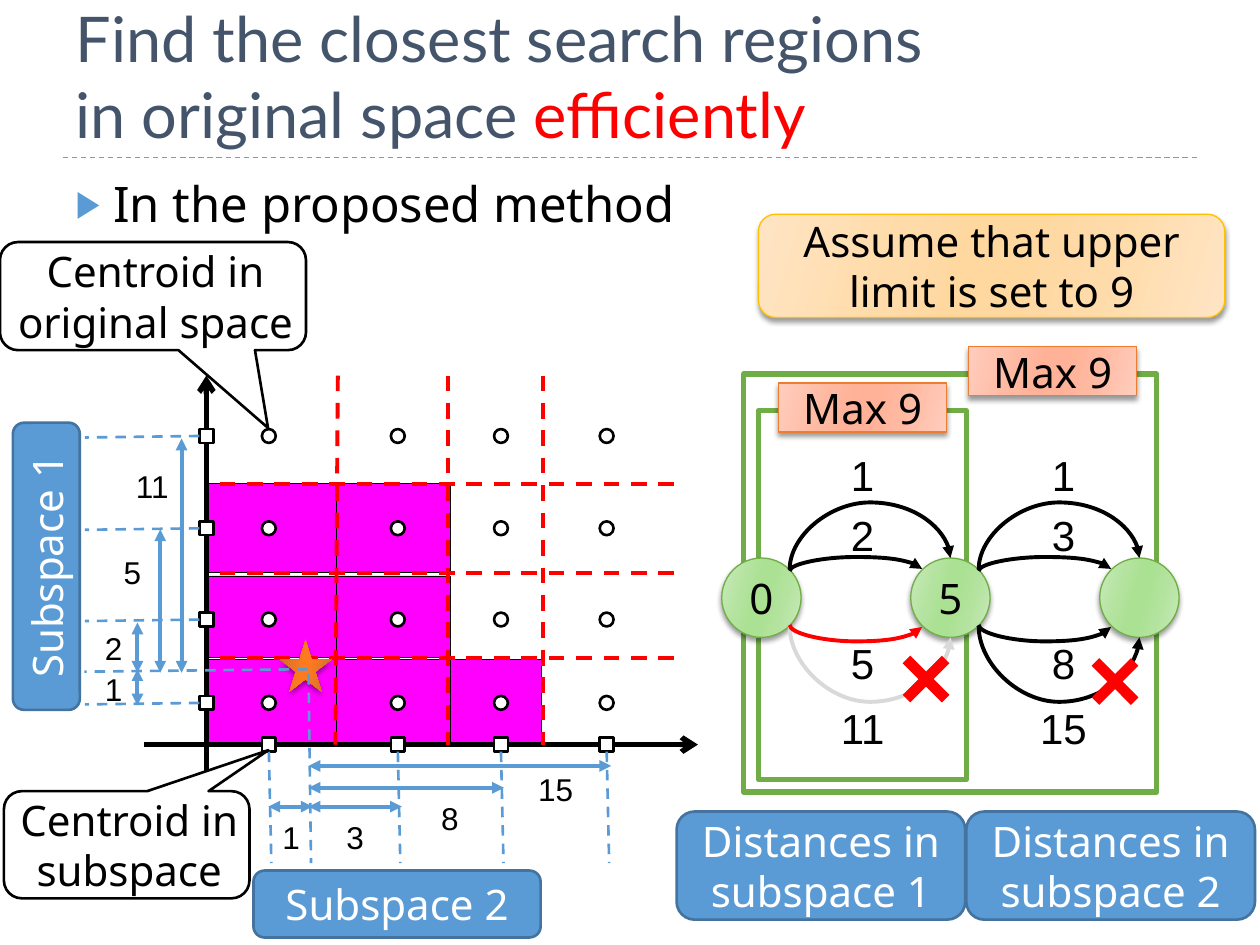
import pptx
import pptx.util
import pptx.dml.color
import pptx.enum.dml
import pptx.enum.shapes
import pptx.enum.text
import pptx.oxml.ns
from lxml import etree

Cm, Pt = pptx.util.Cm, pptx.util.Pt
RGB = pptx.dml.color.RGBColor
SHAPE = pptx.enum.shapes.MSO_SHAPE
LINK = pptx.enum.shapes.MSO_CONNECTOR
ALIGN = pptx.enum.text.PP_ALIGN
ANCHOR = pptx.enum.text.MSO_ANCHOR
qn = pptx.oxml.ns.qn

BLACK, WHITE, RED = RGB(0, 0, 0), RGB(255, 255, 255), RGB(255, 0, 0)
SLATE, GREY = RGB(0x44, 0x54, 0x6A), RGB(0xD9, 0xD9, 0xD9)
BLUE, NAVY = RGB(0x5B, 0x9B, 0xD5), RGB(0x43, 0x73, 0x9E)
ORANGE, GOLD, GREEN = RGB(0xED, 0x7D, 0x31), RGB(0xFF, 0xC0, 0), RGB(0x70, 0xAD, 0x47)
MAGENTA = RGB(255, 0, 255)
# Glossy fills: edge, shoulder and middle colours
STAR = RGB(0xC2, 0x66, 0x28), RGB(0xEB, 0x76, 0x26), RGB(0xFE, 0x7A, 0x20)
CREAM = RGB(0xFF, 0xE5, 0xC5), RGB(0xFF, 0xDB, 0xA9), RGB(0xFF, 0xD8, 0xA0)
SALMON = RGB(0xFF, 0xCD, 0xBE), RGB(0xFF, 0xB9, 0xA1), RGB(0xFF, 0xB2, 0x97)
LIME = RGB(0xCA, 0xEA, 0xBD), RGB(0xB3, 0xE3, 0x9E), RGB(0xAB, 0xE1, 0x93)


def add(parent, tag, **attrs):
    return etree.SubElement(parent, qn(tag), {k: str(v) for k, v in attrs.items()})


class Deck:
    """Holds the fonts and the current slide."""
    title_font, font, number_font = "Lato", "Noto Sans", "Arial"

    def __init__(self, slide):
        self.slide = slide

    def place(self, sp, x, y, w, h):
        sp.left, sp.top, sp.width, sp.height = Cm(x), Cm(y), Cm(w), Cm(h)

    def title(self, box, lead, accent):
        sp = self.slide.shapes.title
        self.place(sp, *box)
        tf = sp.text_frame
        tf.auto_size = pptx.enum.text.MSO_AUTO_SIZE.NONE
        tf.vertical_anchor = ANCHOR.BOTTOM
        p = tf.paragraphs[0]
        p.alignment = ALIGN.LEFT
        p.font.name, p.font.size = self.title_font, Pt(36)
        first, second = lead
        for text, color in ((first, SLATE), (None, None), (second, SLATE), (accent, RED)):
            if text is None:
                p.add_line_break()
                continue
            r = p.add_run()
            r.text, r.font.color.rgb = text, color

    def body(self, box, text):
        sp = self.slide.placeholders[1]
        self.place(sp, *box)
        tf = sp.text_frame
        tf.auto_size = pptx.enum.text.MSO_AUTO_SIZE.NONE
        p = tf.paragraphs[0]
        p.text, p.space_before = text, Pt(6)
        p.font.name, p.font.size, p.font.color.rgb = self.font, Pt(28), BLACK
        pPr = p._p.get_or_add_pPr()
        pPr.set("marL", str(Cm(0.76)))
        pPr.set("indent", str(-Cm(0.76)))
        bullet = [etree.Element(qn(t)) for t in ("a:buClr", "a:buSzPct", "a:buChar")]
        add(bullet[0], "a:srgbClr", val=BLUE)
        bullet[1].set("val", "76000")
        bullet[2].set("char", "▶")
        at = list(pPr).index(pPr.find(qn("a:spcBef"))) + 1
        pPr[at:at] = bullet

    def label(self, sp, text, size, color, font):
        tf = sp.text_frame
        tf.vertical_anchor = ANCHOR.MIDDLE
        p = tf.paragraphs[0]
        p.text, p.alignment = text, ALIGN.CENTER
        p.font.name, p.font.size, p.font.color.rgb = font, Pt(size), color

    def shape(self, kind, box, fill=None, line=None, width=1.5, text="", color=BLACK, adj=()):
        """A plain fill is one colour; three colours make a glossy fill with a shadow."""
        sp = self.slide.shapes.add_shape(kind, *map(Cm, box))
        sp.shadow.inherit = False
        for i, value in enumerate(adj):
            sp.adjustments[i] = value
        if fill in (STAR, CREAM, SALMON, LIME):
            self.gloss(sp, fill)
        elif fill is None:
            sp.fill.background()
        else:
            sp.fill.solid()
            sp.fill.fore_color.rgb = fill
        if line is None:
            sp.line.fill.background()
        else:
            sp.line.color.rgb, sp.line.width = line, Pt(width)
        if text:
            self.label(sp, text, 24, color, self.font)
        return sp

    def gloss(self, sp, colors):
        edge, shoulder, middle = colors
        sp.fill.gradient()
        sp.fill.gradient_angle = 344
        stops = sp._element.spPr.find(".//" + qn("a:gsLst"))
        for gs in list(stops):
            stops.remove(gs)
        for pos, c in zip((0, 30, 45, 55, 73, 100), (edge, shoulder, middle, middle, shoulder, edge)):
            add(add(stops, "a:gs", pos=pos * 1000), "a:srgbClr", val=c)
        effects = sp._element.spPr.find(qn("a:effectLst"))
        shadow = add(effects, "a:outerShdw", blurRad=Pt(3), dist=Pt(2), dir=5400000, rotWithShape=0)
        add(add(shadow, "a:srgbClr", val=BLACK), "a:alpha", val=40000)

    def dot(self, kind, x, y):
        return self.shape(kind, (x - 0.14, y - 0.14, 0.28, 0.28), WHITE, BLACK)

    def callout(self, box, text, adj):
        sp = self.shape(SHAPE.ROUNDED_RECTANGULAR_CALLOUT, box, WHITE, BLACK, text=text, adj=adj)
        tf = sp.text_frame
        tf.margin_left, tf.margin_right, tf.margin_top, tf.margin_bottom = Cm(0.1), 0, 0, 0

    def number(self, text, x, y, size):
        """Centre a number on x, y."""
        w, h = size * (0.03 + 0.02 * len(text)), size * 0.055
        sp = self.slide.shapes.add_textbox(Cm(x - w / 2), Cm(y - h / 2), Cm(w), Cm(h))
        sp.text_frame.word_wrap = False
        self.label(sp, text, size, BLACK, self.number_font)

    def line(self, ends, color, width, dash=False, head=None, tail=None, kind=LINK.STRAIGHT):
        c = self.slide.shapes.add_connector(kind, *map(Cm, ends))
        c.line.color.rgb, c.line.width = color, Pt(width)
        if dash:
            c.line.dash_style = pptx.enum.dml.MSO_LINE.DASH
        ln = c.line._get_or_add_ln()
        for tag, arrow in (("a:headEnd", head), ("a:tailEnd", tail)):
            if arrow:
                add(ln, tag, type=arrow)
        add(c._element.spPr, "a:effectLst")
        return c

    def curve(self, start, end, sites, ends, reach, color=BLACK):
        """Glued arc that bulges by reach: upward when negative, downward when positive."""
        x1, y1, x2, y2 = ends
        cx, cy, w, h = (x1 + x2) / 2, (y1 + y2) / 2, abs(y2 - y1), x2 - x1
        up = reach < 0
        top, bottom = cy - h / 2, cy + h / 2
        box = (cx + w / 2, bottom if up else top, cx - w / 2, top if up else bottom)
        c = self.line(box, color, 2.25, tail="triangle", kind=LINK.CURVE)
        spPr = c._element.spPr
        spPr.find(qn("a:xfrm")).set("rot", str((90 if up else 270) * 60000))
        guides = spPr.find(qn("a:prstGeom")).find(qn("a:avLst"))
        add(guides, "a:gd", name="adj1", fmla=f"val {round(abs(reach) / w * 100000)}")
        glue = c._element.find(".//" + qn("p:cNvCxnSpPr"))
        for tag, sp, site in zip(("a:stCxn", "a:endCxn"), (start, end), sites):
            add(glue, tag, id=sp.shape_id, idx=site)


def draw_grid(d):
    xs, ys = (5.42, 8.02, 10.1, 12.23), (8.79, 10.65, 12.49, 14.17)
    axis_x, axis_y = 4.16, 15.01
    columns = ((4.17, 2.62), (6.78, 2.29), (9.07, 1.85))
    for y, h, count in ((9.75, 1.78, 2), (11.61, 1.65, 2), (13.3, 1.71, 3)):
        for x, w in columns[:count]:
            d.shape(SHAPE.RECTANGLE, (x, y, w, h), MAGENTA, BLACK, 0.25)
    d.line((axis_x, 15.62, axis_x, 7.57), BLACK, 3, tail="arrow")
    d.line((2.9, axis_y, 14.07, axis_y), BLACK, 3, tail="arrow")
    for top, bottom in ((6.81, 6.76), (9.04, 9.04), (10.95, 10.95)):
        d.line((top, 7.57, bottom, axis_y), RED, 2.25, dash=True)
    for y in (11.56, 9.75, 13.26):
        d.line((13.59, y, 4.19, y), RED, 2.25, dash=True)
    for x in xs:
        for y in ys:
            d.dot(SHAPE.OVAL, x, y)
    d.shape(SHAPE.STAR_5_POINT, (5.64, 12.9, 1.04, 1.04), STAR)

    for x in xs:
        marker = d.dot(SHAPE.RECTANGLE, x, axis_y)
        d.line((x, 15.15, x + 0.05, 17.4), BLUE, 1.5, dash=True).begin_connect(marker, 2)
    for y in ys:
        marker = d.dot(SHAPE.RECTANGLE, axis_x, y)
        d.line((4.02, y, 1.71, y + 0.03), BLUE, 1.5, dash=True).begin_connect(marker, 1)
    for ends in ((6.2, 13.49, 1.7, 13.54), (6.22, 13.59, 6.27, 17.4)):
        d.line(ends, BLUE, 1.5, dash=True)
    across = [(x1, y, x2, y) for x1, x2, y in (
        (5.41, 6.3, 16.26), (6.22, 8.1, 16.26), (6.22, 10.16, 15.88), (6.22, 12.32, 15.44))]
    down = [(x, y1, x, y2) for x, y1, y2 in (
        (3.66, 8.84, 13.56), (3.23, 10.67, 13.56), (2.77, 12.55, 13.56), (2.77, 13.49, 14.22))]
    for ends in across + down:
        d.line(ends, BLUE, 2.25, head="triangle", tail="triangle")
    for text, x, y in (("1", 5.87, 16.87), ("3", 7.16, 16.87), ("8", 9.07, 16.48), ("15", 11.2, 15.9),
                       ("1", 2.29, 13.89), ("2", 2.29, 13.06), ("5", 2.67, 11.53), ("11", 3.07, 9.8)):
        d.number(text, x, y, 18)

    d.callout((0, 4.88, 6.17, 2.18), "Centroid in original space", (0.376, 1.219, 0.167))
    d.callout((0.08, 15.95, 4.95, 2.16), "Centroid in subspace", (0.577, -0.883, 0.167))
    for x, y, turn, text in ((5.11, 17.55, 0, "Subspace 2"), (-1.96, 10.74, 270, "Subspace 1")):
        sp = d.shape(SHAPE.ROUNDED_RECTANGLE, (x, y, 5.79, 1.35), BLUE, NAVY, text=text, color=WHITE)
        sp.rotation = turn


def draw_graph(d):
    for x, text in ((19.48, "Distances in subspace 2"), (13.64, "Distances in subspace 1")):
        d.shape(SHAPE.ROUNDED_RECTANGLE, (x, 16.36, 5.82, 2.18), BLUE, NAVY, text=text, color=WHITE)
    for x, texts in ((17.39, ("1", "2", "5", "11")), (21.44, ("1", "3", "8", "15"))):
        for y, text in zip((9.58, 10.77, 13.36, 14.68), texts):
            d.number(text, x, y, 24)
    d.shape(SHAPE.ROUNDED_RECTANGLE, (15.29, 4.32, 9.4, 2.08), CREAM, GOLD, 0.75,
            "Assume that upper limit is set to 9")
    for frame, x, y in (((15.29, 8.28, 4.19, 7.44), 15.7, 7.72), ((14.99, 7.54, 8.33, 8.43), 19.53, 6.99)):
        d.shape(SHAPE.RECTANGLE, frame, None, GREEN, 3)
        d.shape(SHAPE.RECTANGLE, (x, y, 3.38, 0.99), SALMON, ORANGE, 0.75, "Max 9")

    pitch = 3.81
    nodes = [d.shape(SHAPE.OVAL, (14.55 + i * pitch, 11.25, 1.6, 1.6), LIME, GREEN, 0.75, text)
             for i, text in enumerate(("0", "5", ""))]
    for i, (low, inner) in enumerate(((GREY, RED), (BLACK, BLACK))):
        x = 15.35 + i * pitch
        pair = nodes[i], nodes[i + 1]
        d.curve(*pair, (7, 0), (x + 0.57, 11.48, x + pitch, 11.25), -1.35)
        d.curve(*pair, (5, 4), (x + 0.57, 12.62, x + pitch, 12.85), 1.53, low)
        d.curve(*pair, (7, 1), (x + 0.57, 11.51, x + 3.24, 11.47), -0.28)
        d.curve(*pair, (5, 3), (x + 0.57, 12.6, x + 3.24, 12.64), 0.33, inner)
    for x, y in ((17.91, 12.93), (21.72, 12.98)):
        d.shape(SHAPE.MATH_MULTIPLY, (x, y, 1.52, 1.52), RED, adj=(0.142,))


def main():
    prs = pptx.Presentation()
    prs.slide_width, prs.slide_height = Cm(25.4), Cm(19.05)
    d = Deck(prs.slides.add_slide(prs.slide_layouts[1]))
    d.line((1.27, 3.18, 24.13, 3.18), ORANGE, 0.75, dash=True)
    d.title((1.27, 0.43, 22.86, 2.74), ("Find the closest search regions", "in original space "), "efficiently")
    d.body((1.27, 3.38, 24.13, 13.72), "In the proposed method")
    draw_grid(d)
    draw_graph(d)
    prs.save("out.pptx")


if __name__ == "__main__":
    main()
